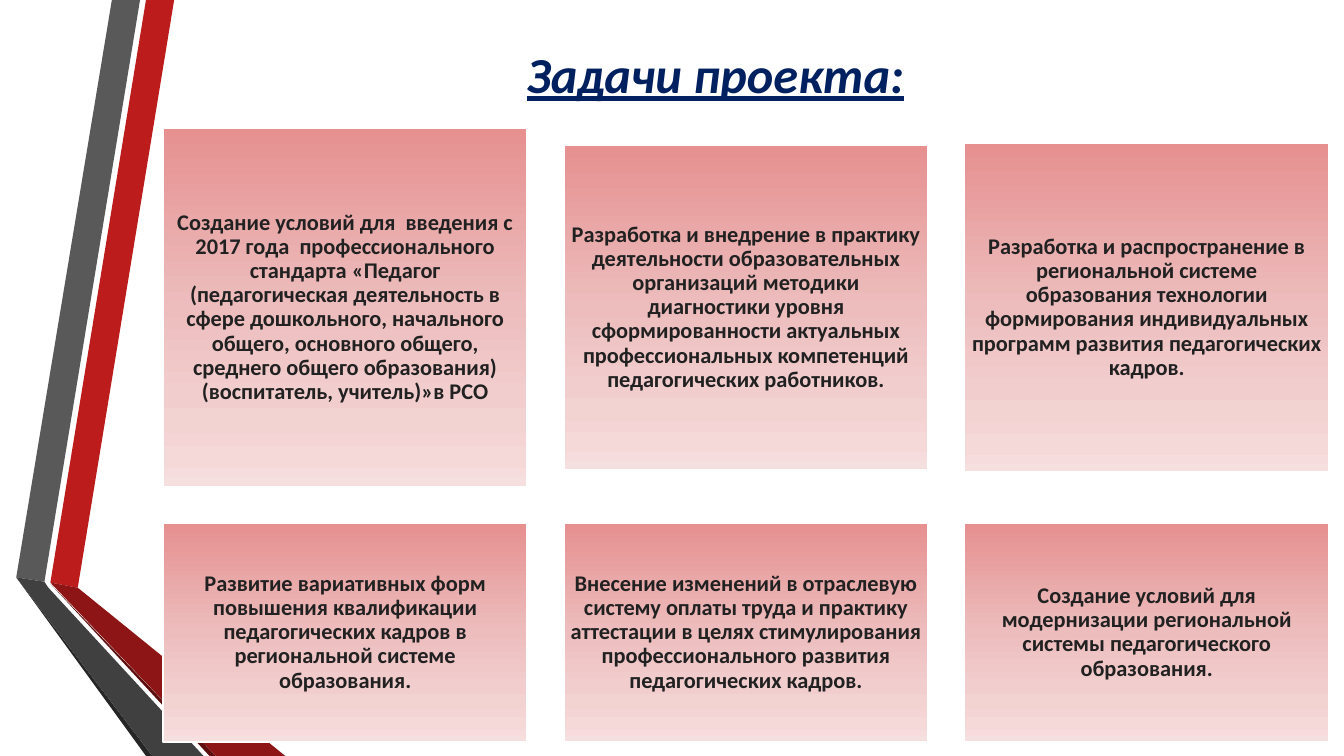
from lxml import etree
from pptx import Presentation
from pptx.dml.color import RGBColor
from pptx.enum.shapes import MSO_SHAPE
from pptx.enum.text import MSO_ANCHOR, PP_ALIGN
from pptx.oxml.ns import qn
from pptx.util import Cm, Pt

RED = RGBColor(0xBC, 0x1C, 0x1C)
GRAY = RGBColor(0x59, 0x59, 0x59)
NEAR_BLACK = RGBColor(0x26, 0x26, 0x26)
MAROON = RGBColor(0x5E, 0x0E, 0x0E)
DARK_RED = RGBColor(0x8D, 0x15, 0x15)
DARK_GRAY = RGBColor(0x40, 0x40, 0x40)
NAVY = RGBColor(0x00, 0x20, 0x60)
INK = RGBColor(0x21, 0x21, 0x21)
WHITE = RGBColor(0xFF, 0xFF, 0xFF)
CARD_GRADIENT = [
    (0, RGBColor(0xE6, 0x90, 0x90)),
    (50, RGBColor(0xED, 0xBD, 0xBD)),
    (74, RGBColor(0xF2, 0xCD, 0xCD)),
    (82, RGBColor(0xF3, 0xD2, 0xD2)),
    (85, RGBColor(0xF4, 0xD4, 0xD4)),
    (92, RGBColor(0xF5, 0xD9, 0xD9)),
    (100, RGBColor(0xF6, 0xDF, 0xDF)),
]

# Ribbon outlines in centimetres, from back to front
RIBBONS = [
    (RED, [(1.27, 14.68), (1.96, 14.81), (4.39, 0), (3.68, 0)]),
    (GRAY, [(3.53, 0), (2.82, 0), (0.41, 14.55), (1.12, 14.66)]),
    (NEAR_BLACK, [(0.41, 14.55), (3.68, 19.05), (3.84, 19.05)]),
    (MAROON, [(1.27, 14.71), (5.28, 19.05), (5.44, 19.05)]),
    (DARK_RED, [(1.27, 14.68), (5.44, 19.05), (7.19, 19.05), (1.96, 14.81)]),
    (DARK_GRAY, [(5.13, 19.05), (1.22, 14.81), (1.12, 14.66), (0.41, 14.55),
                 (3.84, 19.05)]),
]

CARD_LEFT, CARD_STEP, CARD_WIDTH = 4.11, 10.1, 9.18
# Each row: vertical centre, then the height and text of each card
TASK_ROWS = [
    (7.75, [
        (9.04, "Создание условий для  введения с 2017 года  профессионального "
               "стандарта «Педагог (педагогическая деятельность в сфере "
               "дошкольного, начального общего, основного общего, среднего "
               "общего образования) (воспитатель, учитель)»в РСО"),
        (8.18, "Разработка и внедрение в практику деятельности образовательных "
               "организаций методики диагностики уровня сформированности "
               "актуальных профессиональных компетенций педагогических "
               "работников."),
        (8.31, "Разработка и распространение в региональной системе образования "
               "технологии формирования индивидуальных программ развития "
               "педагогических кадров."),
    ]),
    (15.94, [
        (5.51, "Развитие вариативных форм повышения квалификации педагогических "
               "кадров в региональной системе образования."),
        (5.51, "Внесение изменений в отраслевую систему оплаты труда и практику "
               "аттестации в целях стимулирования профессионального развития "
               "педагогических кадров."),
        (5.51, "Создание условий для модернизации региональной системы "
               "педагогического образования."),
    ]),
]


def add_centred_run(frame, text, size, color):
    frame.word_wrap = True
    frame.vertical_anchor = MSO_ANCHOR.MIDDLE
    paragraph = frame.paragraphs[0]
    paragraph.alignment = PP_ALIGN.CENTER
    paragraph.line_spacing = 0.9
    run = paragraph.add_run()
    run.text = text
    run.font.name = "Calibri"
    run.font.size = Pt(size)
    run.font.bold = True
    run.font.color.rgb = color
    return run


def fill_with_gradient(shape, stops):
    """Fill from top to bottom with (percent, colour) stops."""
    shape.fill.gradient()
    shape.fill.gradient_angle = 270
    stop_list = shape.element.spPr.find(qn("a:gradFill")).find(qn("a:gsLst"))
    for old_stop in list(stop_list):
        stop_list.remove(old_stop)
    for percent, color in stops:
        stop = etree.SubElement(stop_list, qn("a:gs"), pos=str(percent * 1000))
        etree.SubElement(stop, qn("a:srgbClr"), val=str(color))


prs = Presentation()
prs.slide_width, prs.slide_height = Cm(33.87), Cm(19.05)
slide = prs.slides.add_slide(prs.slide_layouts[5])

for color, outline in RIBBONS:
    points = [(Cm(x), Cm(y)) for x, y in outline]
    builder = slide.shapes.build_freeform(*points[0])
    builder.add_line_segments(points[1:])
    ribbon = builder.convert_to_shape()
    ribbon.shadow.inherit = False
    ribbon.fill.solid()
    ribbon.fill.fore_color.rgb = color
    ribbon.line.fill.background()

title = slide.shapes.title
title.left, title.top = Cm(4.11), Cm(0.66)
title.width, title.height = Cm(27.84), Cm(2.57)
heading = add_centred_run(title.text_frame, "Задачи проекта:", 36, NAVY)
heading.font.italic = True
heading.font.underline = True

for centre, tasks in TASK_ROWS:
    for column, (height, task) in enumerate(tasks):
        card = slide.shapes.add_shape(
            MSO_SHAPE.RECTANGLE, Cm(CARD_LEFT + column * CARD_STEP),
            Cm(centre - height / 2), Cm(CARD_WIDTH), Cm(height))
        card.shadow.inherit = False
        fill_with_gradient(card, CARD_GRADIENT)
        card.line.color.rgb = WHITE
        card.line.width = Pt(1.25)
        frame = card.text_frame
        frame.margin_left = frame.margin_right = Cm(0.17)
        frame.margin_top = frame.margin_bottom = Cm(0.17)
        add_centred_run(frame, task, 16, INK)

prs.save("out.pptx")
